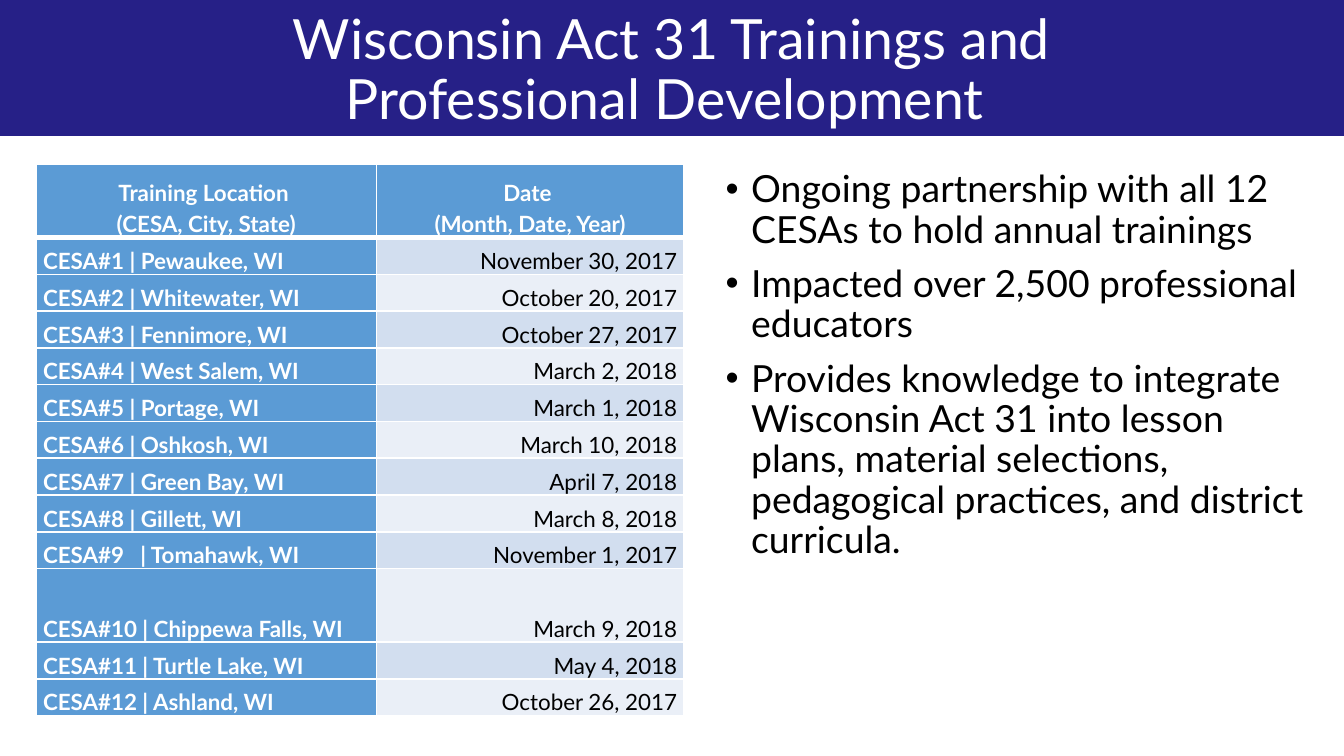
import pptx
import pptx.dml.color
import pptx.enum.shapes
import pptx.enum.text
import pptx.oxml
import pptx.oxml.ns
import pptx.util

inch = pptx.util.Inches
pt = pptx.util.Pt
align = pptx.enum.text.PP_ALIGN
anchor = pptx.enum.text.MSO_ANCHOR
ns = pptx.oxml.ns.nsdecls("a")


def tint(color):
    """Turn a hex string into a colour."""
    return pptx.dml.color.RGBColor.from_string(color)


def style(para, size, color, side, line, bold=False):
    para.alignment = side
    para.line_spacing = line
    for run in para.runs:
        run.font.name = "Lato"
        run.font.size = pt(size)
        run.font.bold = bold
        run.font.color.rgb = tint(color)


deck = pptx.Presentation()
wide = inch(10)
high = wide * 9 // 16
deck.slide_width, deck.slide_height = wide, high
slide = deck.slides.add_slide(deck.slide_layouts[6])

# Title band
band = slide.shapes.add_shape(
    pptx.enum.shapes.MSO_SHAPE.RECTANGLE, 0, 0, wide, int(high * 0.18))
band.shadow.inherit = False
band.fill.solid()
band.fill.fore_color.rgb = tint("262087")
band.line.fill.background()

title = slide.shapes.add_textbox(0, 0, wide, int(high * 0.19)).text_frame
title.word_wrap = True
title.vertical_anchor = anchor.MIDDLE
title.text = "Wisconsin Act 31 Trainings and\vProfessional Development "
style(title.paragraphs[0], 29.7, "FFFFFF", align.CENTER, 0.9)

# Training table: the header and CESA#10 are two units high, the rest one
rows = [
    ("Training Location \n(CESA, City, State)", "Date \n(Month, Date, Year)"),
    ("CESA#1 | Pewaukee, WI", "November 30, 2017"),
    ("CESA#2 | Whitewater, WI", "October 20, 2017"),
    ("CESA#3 | Fennimore, WI", "October 27, 2017"),
    ("CESA#4 | West Salem, WI", "March 2, 2018"),
    ("CESA#5 | Portage, WI", "March 1, 2018"),
    ("CESA#6 | Oshkosh, WI", "March 10, 2018"),
    ("CESA#7 | Green Bay, WI", "April 7, 2018"),
    ("CESA#8 | Gillett, WI", "March 8, 2018"),
    ("CESA#9   | Tomahawk, WI", "November 1, 2017"),
    ("CESA#10 | Chippewa Falls, WI", "March 9, 2018"),
    ("CESA#11 | Turtle Lake, WI", "May 4, 2018"),
    ("CESA#12 | Ashland, WI", "October 26, 2017"),
]
tall = (0, 10)
top, depth = inch(1.22), inch(4.11)
unit = depth // (len(rows) + len(tall))
table = slide.shapes.add_table(
    len(rows), 2, inch(0.27), top, inch(4.82), depth).table
table.columns[0].width = inch(2.53)
table.columns[1].width = inch(2.29)

for r, row in enumerate(rows):
    table.rows[r].height = unit * (2 if r in tall else 1)
    for c, text in enumerate(row):
        cell = table.cell(r, c)
        cell.margin_left = cell.margin_right = inch(0.05)
        cell.margin_top = cell.margin_bottom = 0
        cell.vertical_anchor = anchor.BOTTOM
        head = r == 0
        label = head or c == 0
        fill = "5B9BD5" if label else ("EAEFF7", "D2DEEF")[r % 2]
        cell.fill.solid()
        cell.fill.fore_color.rgb = tint(fill)
        cell.text_frame.text = text
        side = align.CENTER if head else (align.LEFT, align.RIGHT)[c]
        for para in cell.text_frame.paragraphs:
            style(para, 12, "FFFFFF" if label else "000000", side,
                  1.15 if head else 1.0, label)
        for i, edge in enumerate("LRTB"):
            thick = (head and edge == "B") or (r == 1 and edge == "T")
            rule = pptx.oxml.parse_xml(
                f'<a:ln{edge} {ns} w="{pt(3 if thick else 1)}"><a:solidFill>'
                f'<a:srgbClr val="FFFFFF"/></a:solidFill></a:ln{edge}>')
            cell._tc.tcPr.insert(i, rule)

# Bullet points
points = [
    "Ongoing partnership with all 12 CESAs to hold annual trainings",
    "Impacted over 2,500 professional educators",
    "Provides knowledge to integrate Wisconsin Act 31 into lesson plans, "
    "material selections, pedagogical practices, and district curricula.",
]
body = slide.shapes.add_textbox(inch(5.3), top, inch(4.52), depth).text_frame
body.word_wrap = True
body.margin_left = inch(0.1)
body.margin_right = inch(0.08)
body.margin_top = body.margin_bottom = inch(0.05)
body.text = "\n".join(points)
for para in body.paragraphs:
    style(para, 20, "000000", align.LEFT, 0.9)
    para.space_before = pt(7.5)
    props = para._p.get_or_add_pPr()
    props.set("marL", str(inch(0.19)))
    props.set("indent", str(-inch(0.19)))
    props.append(pptx.oxml.parse_xml(f'<a:buFont {ns} typeface="Arial"/>'))
    props.append(pptx.oxml.parse_xml(f'<a:buChar {ns} char="•"/>'))

deck.save("out.pptx")
